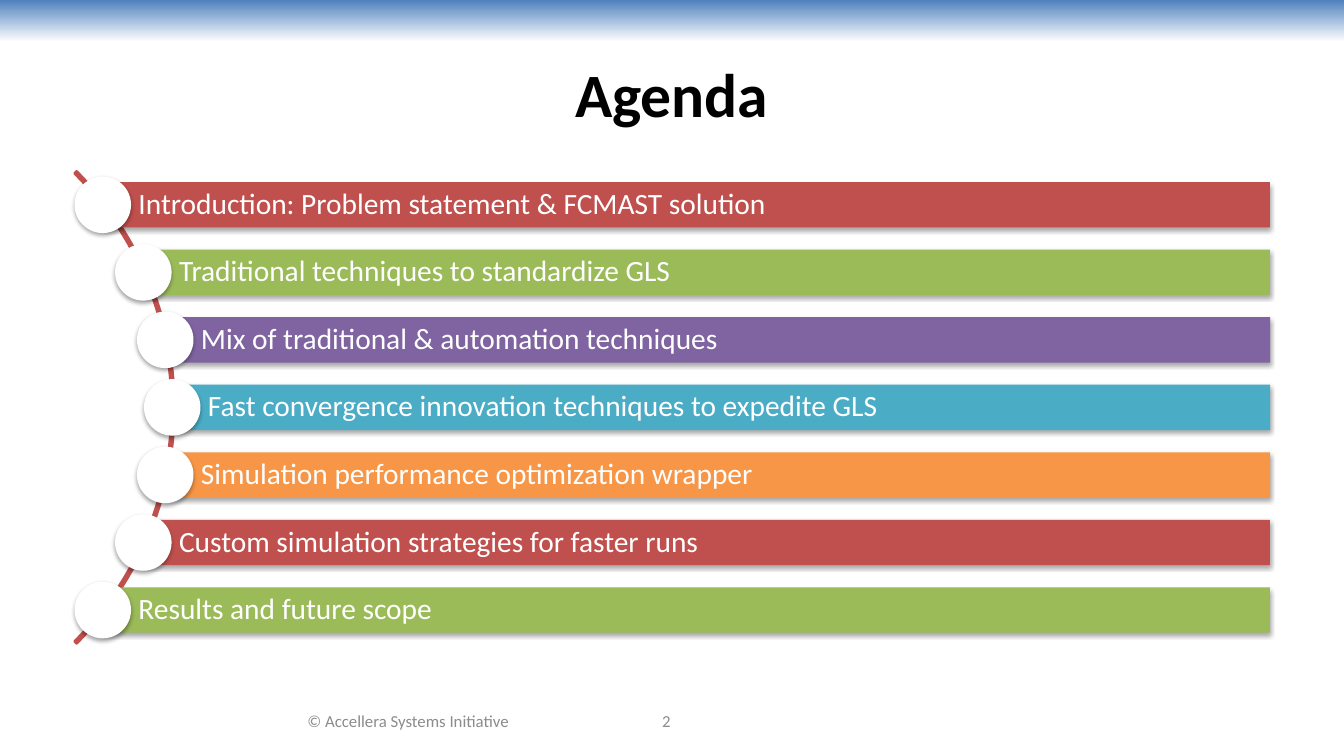
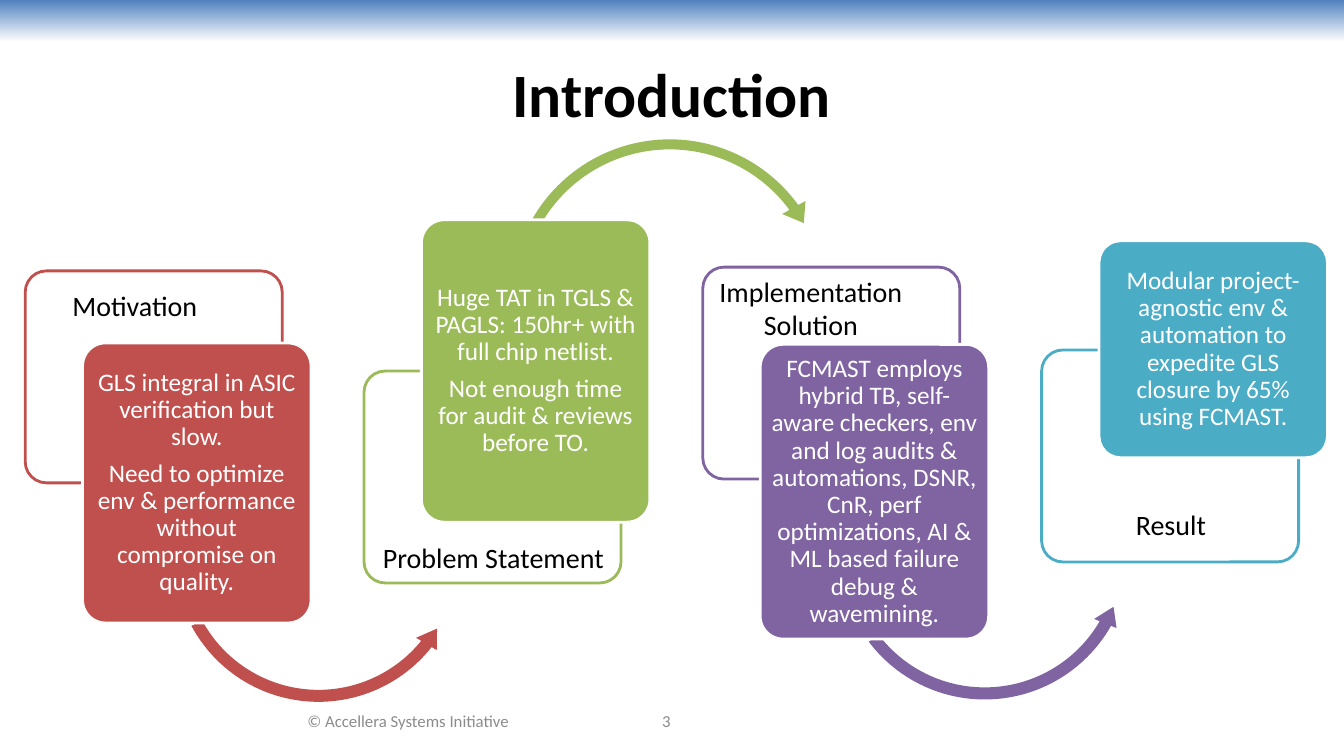
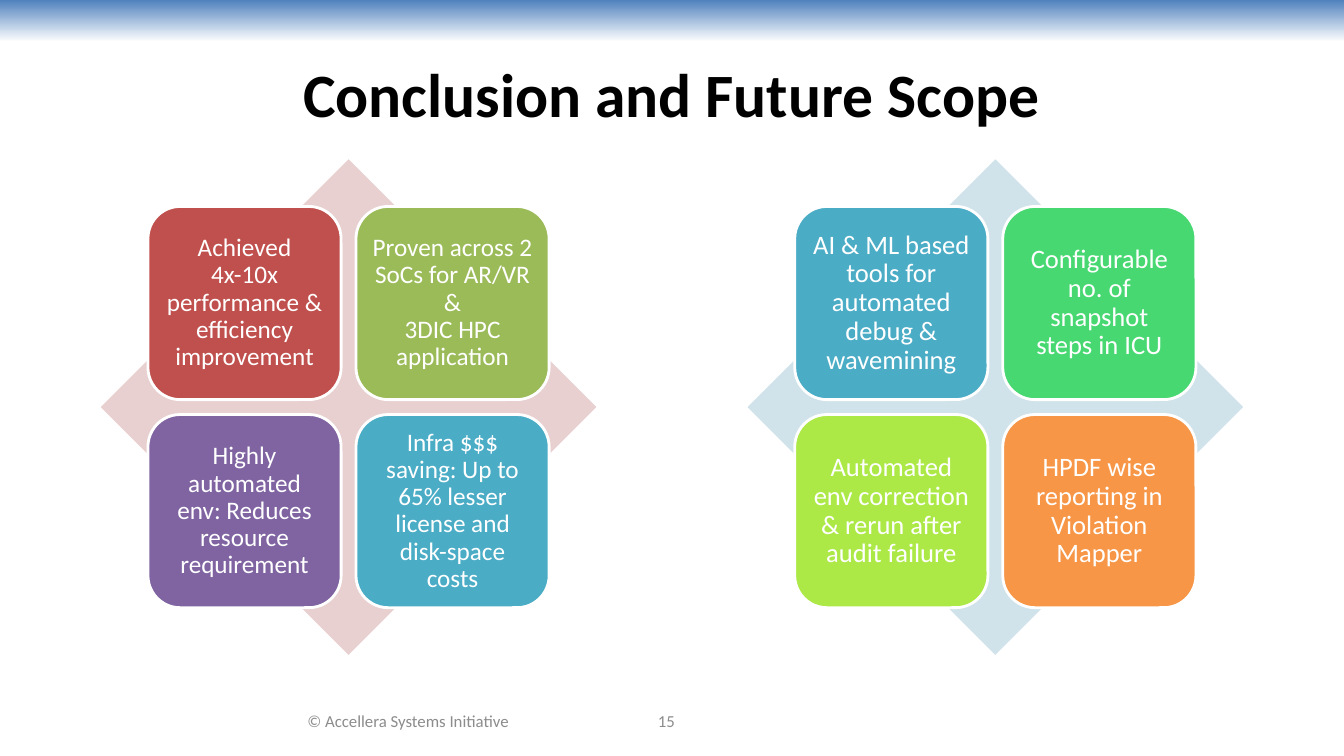
"""Build three slides: an agenda, an introduction flow and a conclusion."""
from dataclasses import dataclass
from math import sqrt
from typing import Optional

from lxml.etree import SubElement
from pptx import Presentation
from pptx.dml.color import RGBColor
from pptx.enum.shapes import MSO_SHAPE as Preset
from pptx.enum.text import MSO_ANCHOR as Anchor, PP_ALIGN as Align
from pptx.oxml.ns import qn
from pptx.shapes.autoshape import Shape
from pptx.slide import Slide
from pptx.text.text import TextFrame
from pptx.util import Pt

WHITE = RGBColor(0xFF, 0xFF, 0xFF)
BLACK = RGBColor(0x00, 0x00, 0x00)
GREY = RGBColor(0x8C, 0x8C, 0x8C)
BLUE = RGBColor(0x4F, 0x81, 0xBD)
RED = RGBColor(0xC0, 0x50, 0x4D)
GREEN = RGBColor(0x9B, 0xBB, 0x59)
PURPLE = RGBColor(0x80, 0x64, 0xA2)
TEAL = RGBColor(0x4B, 0xAC, 0xC6)
ORANGE = RGBColor(0xF7, 0x96, 0x46)
EMERALD = RGBColor(0x47, 0xD8, 0x72)
LIME = RGBColor(0xAC, 0xE9, 0x46)
PALE_RED = RGBColor(0xE8, 0xD0, 0xD0)
PALE_TEAL = RGBColor(0xD0, 0xE3, 0xEA)

FONT = "Calibri"
SLIDE_WIDTH, SLIDE_HEIGHT = 960, 540
LINE_WIDTH = 2


@dataclass(frozen=True)
class Box:
    left: float
    top: float
    width: float
    height: float


@dataclass(frozen=True)
class TextStyle:
    size: float
    color: RGBColor = WHITE
    bold: bool = False
    align: Align = Align.CENTER
    anchor: Anchor = Anchor.MIDDLE
    insets: tuple[float, float, float, float] = (7.2, 3.6, 7.2, 3.6)
    line_spacing: Optional[float] = None
    space_after: float = 0
    wrap: bool = True


@dataclass(frozen=True)
class Arrow:
    preset: Preset
    box: Box
    adjustments: tuple[float, ...]


@dataclass(frozen=True)
class Step:
    label: str
    label_box: Box
    label_align: Align
    color: RGBColor
    outline_top: float
    card_top: float
    card_height: float
    paragraphs: tuple[str, ...]
    arrow: Optional[Arrow] = None
    label_wrap: bool = True


@dataclass(frozen=True)
class Matrix:
    left: float
    color: RGBColor
    text_size: float
    inset: float
    cards: tuple[tuple[str, RGBColor], ...]


TITLE = TextStyle(44, BLACK, bold=True)
FOOTER = TextStyle(12, GREY)
AGENDA = TextStyle(21, align=Align.LEFT, insets=(25.5, 4, 4, 4), line_spacing=0.9)
CARD = TextStyle(18, insets=(3, 2, 3, 2), line_spacing=0.9, space_after=6.5)

AGENDA_ITEMS = (
    ("Introduction: Problem statement & FCMAST solution", RED),
    ("Traditional techniques to standardize GLS", GREEN),
    ("Mix of traditional & automation techniques", PURPLE),
    ("Fast convergence innovation techniques to expedite GLS", TEAL),
    ("Simulation performance optimization wrapper", ORANGE),
    ("Custom simulation strategies for faster runs", RED),
    ("Results and future scope", GREEN),
)

STEPS = (
    Step("Motivation", Box(44.6, 202.3, 129.6, 31.5), Align.LEFT, RED, 193.5, 245, 200,
         ("GLS integral in ASIC verification but slow.",
          "Need to optimize env & performance without compromise on quality."),
         Arrow(Preset.LEFT_CIRCULAR_ARROW, Box(120.2, 291, 214.6, 214.6),
               (0.04, 4.64, 23.19, 91.04, 0.04))),
    Step("Problem Statement", Box(266.4, 382.3, 192.2, 31.5), Align.LEFT, GREEN, 265, 157, 216,
         ("Huge TAT in TGLS & PAGLS: 150hr+ with full chip netlist.",
          "Not enough time for audit & reviews before TO."),
         Arrow(Preset.CIRCULAR_ARROW, Box(359.3, 93.6, 238.3, 238.3),
               (0.03, 4.15, 194.36, 126.01, 0.04))),
    Step("Implementation Solution", Box(498.2, 192.2, 162, 55.4), Align.CENTER, PURPLE,
         190.8, 246, 210.5,
         ("FCMAST employs hybrid TB, self-aware checkers, env and log audits & automations, "
          "DSNR, CnR, perf optimizations, AI & ML based failure debug & wavemining.",),
         Arrow(Preset.LEFT_CIRCULAR_ARROW, Box(595.4, 288, 216, 216),
               (0.04, 4.6, 17.89, 85.78, 0.04))),
    Step("Result", Box(804.2, 358.6, 65.5, 31.5), Align.LEFT, TEAL, 250, 172, 155,
         ("Modular project-agnostic env & automation to expedite GLS closure by 65% "
          "using FCMAST.",), label_wrap=False),
)

MATRICES = (
    Matrix(72, PALE_RED, 18, 5, (
        ("Achieved\n4x-10x performance & efficiency improvement", RED),
        ("Proven across 2 SoCs for AR/VR &\n3DIC HPC application", GREEN),
        ("Highly automated env: Reduces resource requirement", PURPLE),
        ("Infra $$$ saving: Up to 65% lesser license and disk-space costs", TEAL),
    )),
    Matrix(534, PALE_TEAL, 19, 5.5, (
        ("AI & ML based tools for automated debug & wavemining", TEAL),
        ("Configurable no. of snapshot steps in ICU", EMERALD),
        ("Automated env correction & rerun after audit failure", LIME),
        ("HPDF wise reporting in Violation Mapper", ORANGE),
    )),
)


def write_text(frame: TextFrame, paragraphs: tuple[str, ...], style: TextStyle) -> None:
    frame.word_wrap = style.wrap
    frame.vertical_anchor = style.anchor
    left, top, right, bottom = style.insets
    frame.margin_left, frame.margin_top = Pt(left), Pt(top)
    frame.margin_right, frame.margin_bottom = Pt(right), Pt(bottom)
    for index, text in enumerate(paragraphs):
        paragraph = frame.add_paragraph() if index else frame.paragraphs[0]
        paragraph.alignment = style.align
        paragraph.space_after = Pt(style.space_after)
        if style.line_spacing:
            paragraph.line_spacing = style.line_spacing
        for number, line in enumerate(text.split("\n")):
            if number:
                paragraph.add_line_break()
            run = paragraph.add_run()
            run.text = line
            run.font.name = FONT
            run.font.size = Pt(style.size)
            run.font.bold = style.bold
            run.font.color.rgb = style.color


def add_text(slide: Slide, box: Box, text: str, style: TextStyle) -> None:
    shape = slide.shapes.add_textbox(Pt(box.left), Pt(box.top), Pt(box.width), Pt(box.height))
    write_text(shape.text_frame, (text,), style)


def add_preset(slide: Slide, preset: Preset, box: Box, fill: Optional[RGBColor] = None,
               line: Optional[RGBColor] = None, adjustments: tuple[float, ...] = ()) -> Shape:
    shape = slide.shapes.add_shape(
        preset, Pt(box.left), Pt(box.top), Pt(box.width), Pt(box.height))
    shape.shadow.inherit = False
    if fill is None:
        shape.fill.background()
    else:
        shape.fill.solid()
        shape.fill.fore_color.rgb = fill
    if line is None:
        shape.line.fill.background()
    else:
        shape.line.color.rgb = line
        shape.line.width = Pt(LINE_WIDTH)
    for index, value in enumerate(adjustments):
        shape.adjustments[index] = value
    return shape


def add_shadow(shape: Shape) -> None:
    effects = shape._element.spPr.find(qn("a:effectLst"))
    shadow = SubElement(effects, qn("a:outerShdw"), blurRad=str(Pt(3.1)), dist=str(Pt(1.8)),
                        dir="5400000", rotWithShape="0")
    color = SubElement(shadow, qn("a:srgbClr"), val=str(BLACK))
    SubElement(color, qn("a:alpha"), val="35000")


def set_opacity(shape: Shape, percent: int) -> None:
    color = shape._element.spPr.find(qn("a:solidFill")).find(qn("a:srgbClr"))
    SubElement(color, qn("a:alpha"), val=str(percent * 1000))


def add_framed_slide(presentation: Presentation, title: str, number: int) -> Slide:
    slide = presentation.slides.add_slide(presentation.slide_layouts[6])
    band = add_preset(slide, Preset.RECTANGLE, Box(0, 0, SLIDE_WIDTH, 30))
    band.fill.gradient()
    band.fill.gradient_angle = 270
    for stop, position, color in zip(band.fill.gradient_stops, (0, 1), (BLUE, WHITE)):
        stop.position = position
        stop.color.rgb = color
    add_text(slide, Box(48, 21.6, 864, 90), title, TITLE)
    add_text(slide, Box(175.7, 500.4, 231.8, 28.8), "© Accellera Systems Initiative", FOOTER)
    add_text(slide, Box(383.8, 500.4, 184.3, 28.8), str(number), FOOTER)
    return slide


def draw_agenda(slide: Slide) -> None:
    middle, pitch, bar_height, bar_right, dot_size = 291, 48.24, 32.4, 907.2, 40.4
    center, radius, arc_size = -113, 236, 476.6
    add_preset(slide, Preset.BLOCK_ARC,
               Box(center - 0.8 - arc_size / 2, middle - arc_size / 2, arc_size, arc_size),
               line=RED, adjustments=(189, 27, 0.004))
    for index, (text, color) in enumerate(AGENDA_ITEMS):
        offset = (index - len(AGENDA_ITEMS) // 2) * pitch
        left = center + sqrt(radius ** 2 - offset ** 2)
        bar = add_preset(
            slide, Preset.RECTANGLE,
            Box(left, middle + offset - bar_height / 2, bar_right - left, bar_height), color)
        add_shadow(bar)
        write_text(bar.text_frame, (text,), AGENDA)
        dot = add_preset(
            slide, Preset.OVAL,
            Box(left - dot_size / 2, middle + offset - dot_size / 2, dot_size, dot_size), WHITE)
        add_shadow(dot)


def draw_flow(slide: Slide) -> None:
    for index, step in enumerate(STEPS):
        left = 18 + 242 * index
        outline = add_preset(slide, Preset.ROUNDED_RECTANGLE,
                             Box(left, step.outline_top, 183.6, 151.4), WHITE, step.color, (0.1,))
        set_opacity(outline, 90)
        if step.arrow:
            add_preset(slide, step.arrow.preset, step.arrow.box, step.color,
                       adjustments=step.arrow.adjustments)
        card = add_preset(slide, Preset.ROUNDED_RECTANGLE,
                          Box(left + 41, step.card_top, 163.2, step.card_height),
                          step.color, WHITE, (0.1,))
        write_text(card.text_frame, step.paragraphs, CARD)
    for step in STEPS:
        style = TextStyle(20, BLACK, align=step.label_align, anchor=Anchor.TOP,
                          wrap=step.label_wrap)
        add_text(slide, step.label_box, step.label, style)


def draw_matrix(slide: Slide, matrix: Matrix) -> None:
    top, size, margin, card_size = 113.8, 354, 33.7, 138
    pitch = size - 2 * margin - card_size
    add_preset(slide, Preset.DIAMOND, Box(matrix.left, top, size, size), matrix.color)
    style = TextStyle(matrix.text_size, insets=(matrix.inset,) * 4, line_spacing=0.9)
    for index, (text, color) in enumerate(matrix.cards):
        row, column = divmod(index, 2)
        box = Box(matrix.left + margin + column * pitch, top + margin + row * pitch,
                  card_size, card_size)
        card = add_preset(slide, Preset.ROUNDED_RECTANGLE, box, color, WHITE)
        write_text(card.text_frame, (text,), style)


def main() -> None:
    presentation = Presentation()
    presentation.slide_width = Pt(SLIDE_WIDTH)
    presentation.slide_height = Pt(SLIDE_HEIGHT)
    draw_agenda(add_framed_slide(presentation, "Agenda", 2))
    draw_flow(add_framed_slide(presentation, "Introduction", 3))
    conclusion = add_framed_slide(presentation, "Conclusion and Future Scope", 15)
    for matrix in MATRICES:
        draw_matrix(conclusion, matrix)
    presentation.save("out.pptx")


if __name__ == "__main__":
    main()
